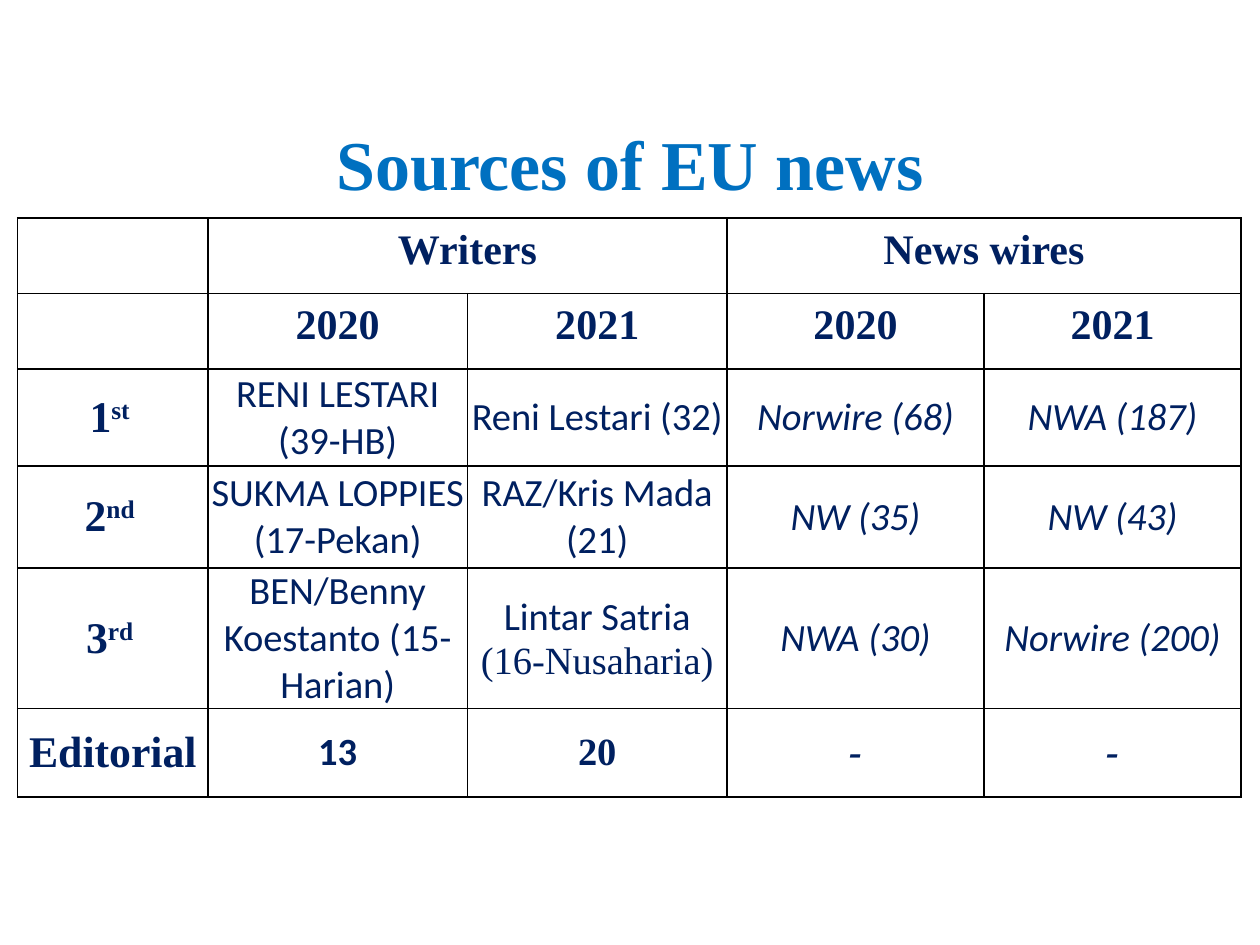
from lxml.etree import SubElement
from pptx import Presentation
from pptx.dml.color import RGBColor
from pptx.enum.text import MSO_ANCHOR as Anchor, MSO_AUTO_SIZE as Fit, PP_ALIGN as Align
from pptx.oxml.ns import qn
from pptx.util import Inches, Pt

SERIF, SANS = "Times New Roman", "Calibri"
BLUE, NAVY, BLACK = "0070C0", "002060", "000000"

# Styles: size, font, bold, italic
TITLE = (40, SERIF, True, False)
HEAD = (24, SERIF, True, False)
RANK = (25, SERIF, True, False)
NAME = (22, SANS, False, False)
PAPER = (22, SERIF, False, False)
WIRE = (22, SANS, False, True)
SUM = (22, SANS, True, False)
COUNT = (22, SERIF, True, False)
DASH = (22, SERIF, True, True)

HEADS = [
    ["", "Writers", "", "News wires", ""],
    ["", "2020", "2021", "2020", "2021"],
]
RANKS = [
    ("1", "st ", "RENI LESTARI (39-HB)", "Reni Lestari (32)", "Norwire (68)", "NWA (187)"),
    ("2", "nd ", "SUKMA LOPPIES (17-Pekan)", "RAZ/Kris Mada (21)", "NW (35)", "NW (43)"),
    ("3", "rd ", "BEN/Benny Koestanto (15-Harian)", "Lintar Satria\n(16-Nusaharia)",
     "NWA (30)", "Norwire (200)"),
]
TOTALS = [("Editorial", RANK), ("13", SUM), ("20", COUNT), ("-", DASH), ("-", DASH)]

COLS = [1.51, 2.06, 2.06, 2.04, 2.04]
ROWS = [0.6, 0.6, 0.77, 0.81, 1.11, 0.7]
LEFT, TOP = 0.14, 1.73


def paint(text):
    return RGBColor.from_string(text)


def add_run(para, text, style, color=NAVY, raised=False):
    run = para.add_run()
    run.text = text
    font = run.font
    size, font.name, font.bold, font.italic = style
    font.size = Pt(size)
    font.color.rgb = paint(color)
    if raised:
        run._r.get_or_add_rPr().set("baseline", "30000")


def frame_cell(cell):
    """Give a cell thin black borders and no fill."""
    props = cell._tc.get_or_add_tcPr()
    for side in ("lnL", "lnR", "lnT", "lnB"):
        line = SubElement(props, qn(f"a:{side}"), w=str(Pt(1)))
        fill = SubElement(line, qn("a:solidFill"))
        SubElement(fill, qn("a:srgbClr"), val=BLACK)
    cell.fill.background()
    cell.vertical_anchor = Anchor.MIDDLE


def fill_cell(cell, text, style, mark=""):
    """Write each line as a paragraph, with a raised mark after the last."""
    frame = cell.text_frame
    for i, part in enumerate(text.split("\n")):
        para = frame.add_paragraph() if i else frame.paragraphs[0]
        para.alignment = Align.CENTER
        if style == HEAD:
            para.line_spacing = Pt(20)
        add_run(para, part, PAPER if i else style)
    if mark:
        add_run(para, mark, style, raised=True)


def add_title(slide):
    title = slide.shapes.title
    title.left, title.top = Inches(0.69), Inches(0.94)
    title.width, title.height = Inches(8.62), Inches(0.79)
    frame = title.text_frame
    frame.auto_size = Fit.NONE
    frame.vertical_anchor = Anchor.MIDDLE
    para = frame.paragraphs[0]
    para.alignment = Align.CENTER
    para.line_spacing = 0.9
    add_run(para, "Sources of EU news", TITLE, BLUE)


def add_grid(slide):
    table = slide.shapes.add_table(
        len(ROWS), len(COLS), Inches(LEFT), Inches(TOP),
        Inches(sum(COLS)), Inches(sum(ROWS))).table
    table.first_row = table.horz_banding = False
    for col, width in zip(table.columns, COLS):
        col.width = Inches(width)
    for row, height in zip(table.rows, ROWS):
        row.height = Inches(height)

    body = [[(text, HEAD) if text else None for text in row] for row in HEADS]
    for rank, mark, *cells in RANKS:
        styles = (NAME, NAME, WIRE, WIRE)
        body.append([(rank, RANK, mark), *zip(cells, styles)])
    body.append(TOTALS)

    for r, row in enumerate(body):
        for c, item in enumerate(row):
            cell = table.cell(r, c)
            frame_cell(cell)
            if r >= len(HEADS):
                cell.margin_left = cell.margin_right = 0
                cell.margin_top = cell.margin_bottom = 0
            if item:
                fill_cell(cell, *item)
    for c in (1, 3):
        table.cell(0, c).merge(table.cell(0, c + 1))


def main():
    deck = Presentation()
    deck.slide_width, deck.slide_height = Inches(10), Inches(7.5)
    slide = deck.slides.add_slide(deck.slide_layouts[5])
    add_title(slide)
    add_grid(slide)
    deck.save("out.pptx")


if __name__ == "__main__":
    main()
